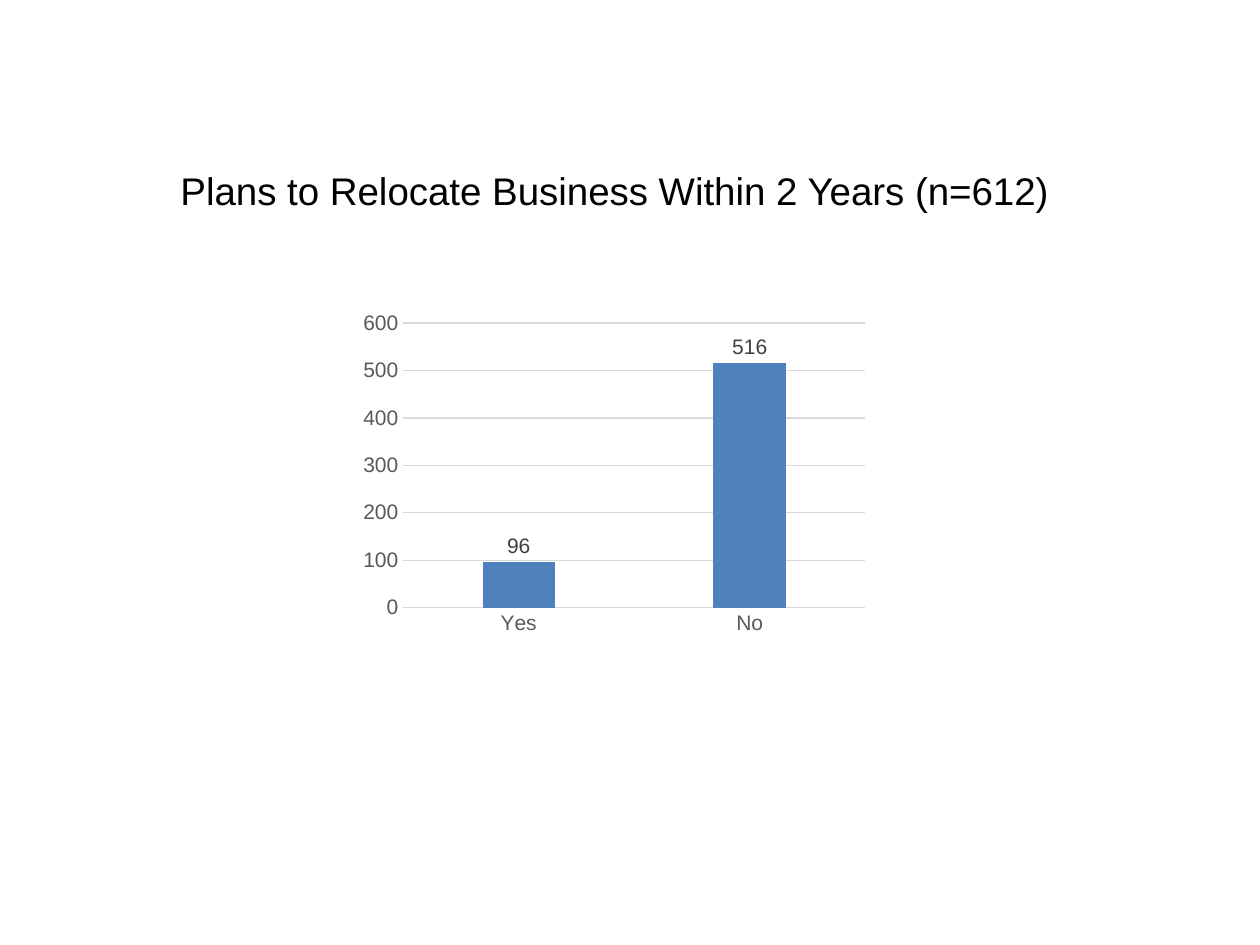
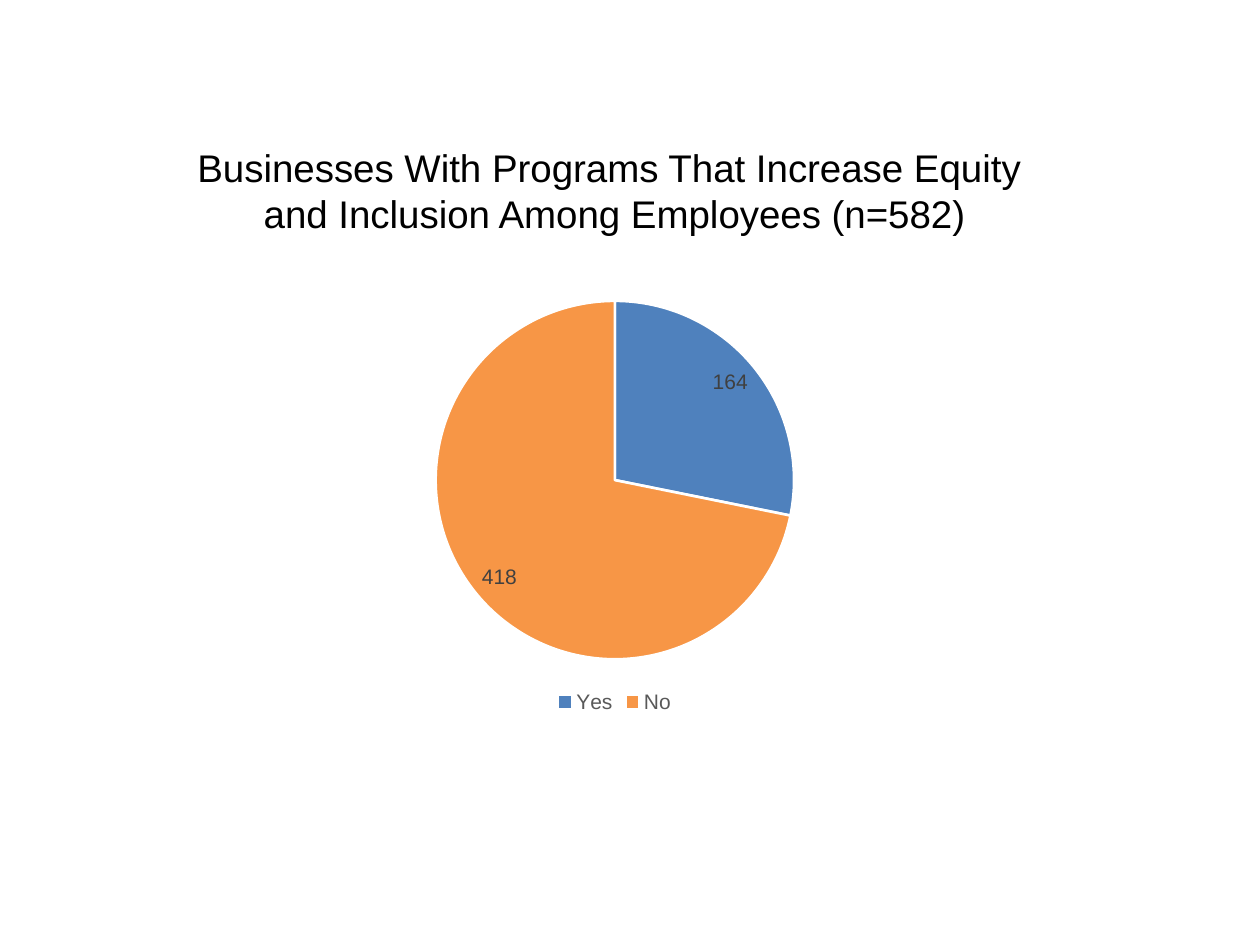
from pptx import Presentation
from pptx import util as u
from pptx.chart.data import CategoryChartData
from pptx.dml.color import RGBColor
from pptx.enum import chart as ch, text

BLACK = RGBColor(0x00, 0x00, 0x00)
WHITE = RGBColor(0xFF, 0xFF, 0xFF)
GRID = RGBColor(0xD9, 0xD9, 0xD9)
AXIS = RGBColor(0x59, 0x59, 0x59)
LABEL = RGBColor(0x40, 0x40, 0x40)
BLUE = RGBColor(0x4F, 0x81, 0xBD)
ORANGE = RGBColor(0xF7, 0x96, 0x46)

prs = Presentation()
prs.slide_width, prs.slide_height = u.Inches(10), u.Inches(7.5)
W, H = prs.slide_width, prs.slide_height
CENTER = 0.4878 * W


def style(font, size=12, color=BLACK):
    font.name = "Arial"
    font.size = u.Pt(size)
    font.bold = False
    font.color.rgb = color


def write(tf, content, size=22, color=BLACK, align=text.PP_ALIGN.CENTER):
    tf.text = content
    tf.word_wrap = False
    tf.auto_size = text.MSO_AUTO_SIZE.SHAPE_TO_FIT_TEXT
    tf.vertical_anchor = text.MSO_ANCHOR.MIDDLE
    p = tf.paragraphs[0]
    p.alignment = align
    for r in p.runs:
        style(r.font, size, color)


BAR, PIE = ch.XL_CHART_TYPE.COLUMN_CLUSTERED, ch.XL_CHART_TYPE.PIE
pages = [
    ("Plans to Relocate Business Within 2 Years (n=612)",
     (0.718, 0.063), BAR, (96, 516), (0.28, 0.323, 0.415, 0.356)),
    ("Businesses With Programs That Increase Equity \vand Inclusion Among Employees (n=582)",
     (0.691, 0.112), PIE, (164, 418), (0.24, 0.3, 0.496, 0.46)),
]

for title, (tw, th), kind, values, (x, y, w, h) in pages:
    s = prs.slides.add_slide(prs.slide_layouts[5])
    sp = s.shapes.title
    sp.left, sp.top = int(CENTER - tw * W / 2), int((0.201 - th / 2) * H)
    sp.width, sp.height = int(tw * W), int(th * H)
    write(sp.text_frame, title)

    data = CategoryChartData()
    data.categories = ["Yes", "No"]
    data.add_series("Series 1", values)
    chart = s.shapes.add_chart(
        kind, int(x * W), int(y * H), int(w * W), int(h * H), data).chart
    style(chart.font)
    chart.has_title = False
    chart.has_legend = kind == PIE

    plot = chart.plots[0]
    plot.vary_by_categories = kind == PIE
    series = plot.series[0]
    labels = series.data_labels
    labels.show_value = True
    style(labels.font, color=LABEL)

    if kind == BAR:
        plot.gap_width, plot.overlap = 219, -27
        series.format.fill.solid()
        series.format.fill.fore_color.rgb = BLUE
        labels.position = ch.XL_LABEL_POSITION.OUTSIDE_END
        for axis in (chart.category_axis, chart.value_axis):
            axis.major_tick_mark = axis.minor_tick_mark = ch.XL_TICK_MARK.NONE
            style(axis.tick_labels.font, color=AXIS)
        chart.value_axis.format.line.fill.background()
        for line in (chart.category_axis.format.line,
                     chart.value_axis.major_gridlines.format.line):
            line.color.rgb = GRID
            line.width = u.Pt(0.75)
    else:
        labels.position = ch.XL_LABEL_POSITION.INSIDE_END
        labels.show_percentage = False
        chart.legend.position = ch.XL_LEGEND_POSITION.BOTTOM
        chart.legend.include_in_layout = False
        style(chart.legend.font, color=AXIS)
        for i, color in enumerate((BLUE, ORANGE)):
            fmt = series.points[i].format
            fmt.fill.solid()
            fmt.fill.fore_color.rgb = color
            fmt.line.color.rgb = WHITE
            fmt.line.width = u.Pt(1.5)

prs.save("out.pptx")
